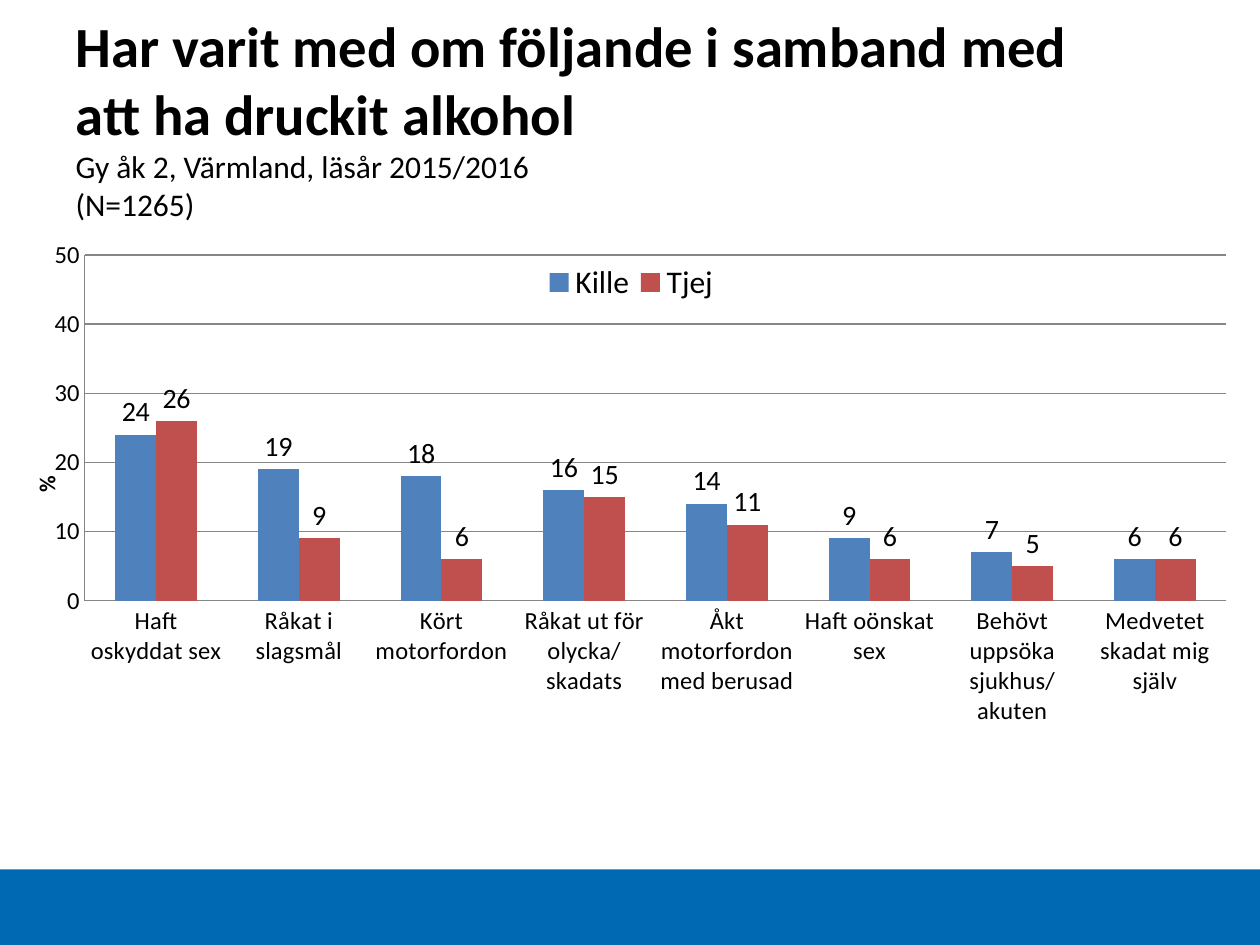
from dataclasses import dataclass

from lxml import etree
from pptx import Presentation
from pptx.chart.data import CategoryChartData
from pptx.dml.color import RGBColor as RGB
from pptx.enum.chart import XL_CHART_TYPE as ChartType, XL_LABEL_POSITION as LabelPos
from pptx.enum.chart import XL_LEGEND_POSITION as LegendPos, XL_TICK_MARK as Tick
from pptx.enum.shapes import MSO_SHAPE as Shape
from pptx.enum.text import MSO_ANCHOR as Anchor, MSO_AUTO_SIZE as AutoSize, PP_ALIGN as Align
from pptx.oxml.ns import qn
from pptx.util import Inches, Pt


@dataclass(frozen=True)
class Theme:
    font: str = "Calibri"
    ink: RGB = RGB(0, 0, 0)
    band: RGB = RGB.from_string("0069B4")
    grid: RGB = RGB.from_string("868686")
    series: tuple = (RGB.from_string("4F81BD"), RGB.from_string("C0504D"))
    heading: float = 32.4
    subheading: float = 18
    legend: float = 18
    labels: float = 16
    ticks: float = 14
    axis_title: float = 13


def apply(target, formats):
    for name, value in formats.items():
        setattr(target, name, value)


class SlideBuilder:
    def __init__(self, slide, theme):
        self.slide = slide
        self.theme = theme

    def font(self, font, size, bold=False):
        apply(font, {"name": self.theme.font, "size": Pt(size), "bold": bold})
        font.color.rgb = self.theme.ink

    def line(self, line):
        line.color.rgb = self.theme.grid
        line.width = Pt(0.75)

    def layout(self, parent, index, **places):
        layout = parent.find(qn("c:layout"))
        if layout is None:
            layout = etree.Element(qn("c:layout"))
            parent.insert(index, layout)
        manual = etree.SubElement(layout, qn("c:manualLayout"))
        for tag, value in places.items():
            etree.SubElement(manual, qn(f"c:{tag}")).set("val", str(value))

    def band(self, left, top, width, height):
        band = self.slide.shapes.add_shape(
            Shape.RECTANGLE, *map(Inches, (left, top, width, height)))
        band.shadow.inherit = False
        band.fill.solid()
        band.fill.fore_color.rgb = self.theme.band
        band.line.fill.background()

    def title(self, left, top, width, height, heading, details):
        title = self.slide.shapes.title
        apply(title, dict(zip(("left", "top", "width", "height"),
                              map(Inches, (left, top, width, height)))))
        frame = title.text_frame
        apply(frame, {"word_wrap": True, "auto_size": AutoSize.NONE,
                      "vertical_anchor": Anchor.MIDDLE})
        paragraph = frame.paragraphs[0]
        paragraph.alignment = Align.LEFT
        parts = [(heading, self.theme.heading, True)]
        parts += [(detail, self.theme.subheading, False) for detail in details]
        for position, (text, size, bold) in enumerate(parts):
            if position:
                paragraph.add_line_break()
            run = paragraph.add_run()
            run.text = text
            self.font(run.font, size, bold)

    def columns(self, left, top, width, height, categories, groups):
        data = CategoryChartData(number_format="General")
        data.categories = categories
        for name, values in groups.items():
            data.add_series(name, values)
        chart = self.slide.shapes.add_chart(
            ChartType.COLUMN_CLUSTERED, *map(Inches, (left, top, width, height)), data).chart
        chart.has_title = False
        self.font(chart.font, self.theme.axis_title)
        self.axes(chart)
        self.bars(chart.plots[0])
        chart.has_legend = True
        apply(chart.legend, {"position": LegendPos.TOP, "include_in_layout": False})
        self.font(chart.legend.font, self.theme.legend)

        root = chart.element
        edges = {"xMode": "edge", "yMode": "edge"}
        self.layout(root.find(".//" + qn("c:plotArea")), 0, layoutTarget="inner",
                    **edges, x=0.056, y=0.042, w=0.917, h=0.539)
        self.layout(root.find(".//" + qn("c:legend")), 1,
                    **edges, x=0.42, y=0.05, w=0.15, h=0.07)
        self.layout(root.find(".//" + qn("c:valAx")).find(qn("c:title")), 1,
                    **edges, x=0.01, y=0.38)

    def axes(self, chart):
        for axis in (chart.category_axis, chart.value_axis):
            apply(axis, {"major_tick_mark": Tick.NONE, "minor_tick_mark": Tick.NONE})
            self.font(axis.tick_labels.font, self.theme.ticks)
            self.line(axis.format.line)
        values = chart.value_axis
        apply(values, {"minimum_scale": 0, "maximum_scale": 50, "major_unit": 10,
                       "has_major_gridlines": True})
        self.line(values.major_gridlines.format.line)
        frame = values.axis_title.text_frame
        frame.text = "%"
        self.font(frame.paragraphs[0].runs[0].font, self.theme.axis_title, True)
        body = values.axis_title.format and frame._txBody.find(qn("a:bodyPr"))
        body.set("rot", "-5400000")
        body.set("vert", "horz")

    def bars(self, plot):
        apply(plot, {"gap_width": 150, "overlap": 0, "vary_by_categories": False})
        for series, color in zip(plot.series, self.theme.series):
            series.format.fill.solid()
            series.format.fill.fore_color.rgb = color
            labels = series.data_labels
            apply(labels, {"show_value": True, "position": LabelPos.OUTSIDE_END})
            self.font(labels.font, self.theme.labels)


def main():
    deck = Presentation()
    apply(deck, {"slide_width": Inches(10), "slide_height": Inches(7.5)})
    builder = SlideBuilder(deck.slides.add_slide(deck.slide_layouts[5]), Theme())
    builder.band(0, 6.9, 10, 0.6)
    builder.title(0.5, 0.3, 8.66, 1.25,
                  "Har varit med om följande i samband med att ha druckit alkohol",
                  ("Gy åk 2, Värmland, läsår 2015/2016", "(N=1265)"))
    categories = ("Haft oskyddat sex", "Råkat i slagsmål", "Kört motorfordon",
                  "Råkat ut för olycka/skadats", "Åkt motorfordon med berusad",
                  "Haft oönskat sex", "Behövt uppsöka sjukhus/akuten",
                  "Medvetet skadat mig själv")
    groups = {"Kille": (24, 19, 18, 16, 14, 9, 7, 6),
              "Tjej": (26, 9, 6, 15, 11, 6, 5, 6)}
    builder.columns(0.12, 1.81, 9.88, 5.09, categories, groups)
    deck.save("out.pptx")


if __name__ == "__main__":
    main()
